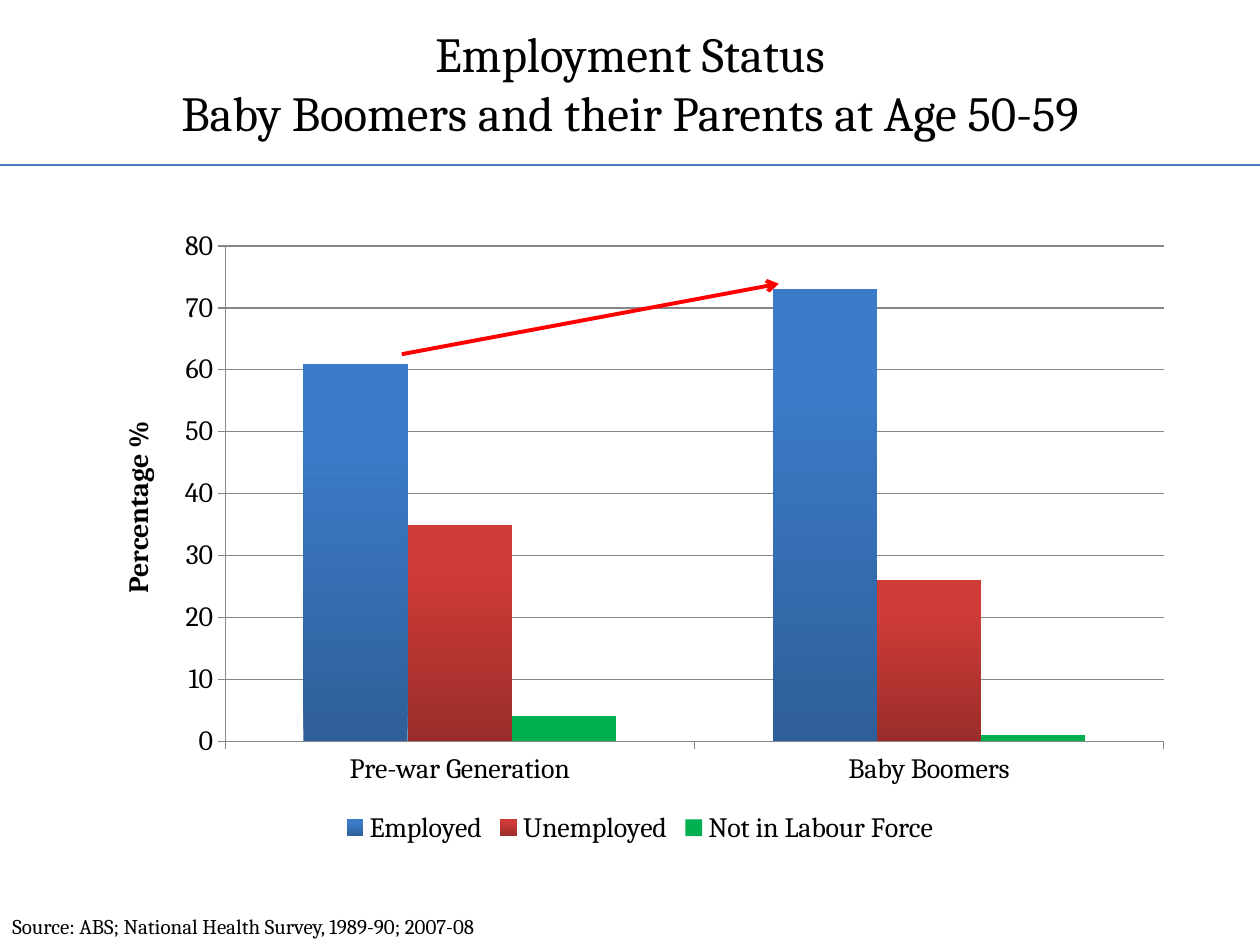
from collections import namedtuple

from lxml import etree
from pptx import Presentation
from pptx import util as u
from pptx.chart.data import CategoryChartData
from pptx.dml.color import RGBColor
from pptx.enum import chart as charts, shapes, text
from pptx.oxml import ns

FONT = "Cambria"
BLACK = RGBColor(0x00, 0x00, 0x00)
GREY = RGBColor(0x86, 0x86, 0x86)
RULE_BLUE = RGBColor(0x4B, 0x7E, 0xBC)
ARROW_RED = RGBColor(0xFF, 0x00, 0x00)
DARK_BLUE = RGBColor(0x2E, 0x5F, 0x98)
LIGHT_BLUE = RGBColor(0x3C, 0x7B, 0xC9)
DARK_RED = RGBColor(0x9A, 0x2D, 0x2A)
LIGHT_RED = RGBColor(0xCF, 0x3B, 0x37)
GREEN = RGBColor(0x00, 0xB0, 0x50)

CATEGORIES = ["Pre-war Generation", "Baby Boomers"]
SERIES = [
    ("Employed", (61, 73), (DARK_BLUE, LIGHT_BLUE)),
    ("Unemployed", (35, 26), (DARK_RED, LIGHT_RED)),
    ("Not in Labour Force", (4, 1), (GREEN,)),
]
PLOT_LAYOUT = {"x": 0.12, "y": 0.05, "w": 0.86, "h": 0.78}

Box = namedtuple("Box", "left top width height")


def format_font(font, size, bold=False, color=BLACK):
    """Apply the slide's typeface with the given size, weight and colour."""
    font.name, font.size, font.bold = FONT, u.Pt(size), bold
    font.color.rgb = color


def write_text(frame, content, size, align=text.PP_ALIGN.LEFT, anchor=text.MSO_ANCHOR.TOP, **font):
    """Write one paragraph into a text frame and format it."""
    frame.word_wrap = True
    frame.vertical_anchor = anchor
    paragraph = frame.paragraphs[0]
    paragraph.text = content
    paragraph.alignment = align
    for run in paragraph.runs:
        format_font(run.font, size, **font)


def add_line(slide, start, end, color, width, arrow=False):
    """Draw a straight line, with an open arrowhead at its end if asked."""
    points = [u.Cm(value) for value in (*start, *end)]
    connector = slide.shapes.add_connector(shapes.MSO_CONNECTOR.STRAIGHT, *points)
    connector.line.color.rgb = color
    connector.line.width = u.Pt(width)
    properties = connector._element.spPr
    etree.SubElement(properties, ns.qn("a:effectLst"))
    if arrow:
        etree.SubElement(connector.line._get_or_add_ln(), ns.qn("a:tailEnd"), type="arrow")


def add_header(slide, box):
    """Place the title with a full-width rule along the bottom of its box."""
    margin = 1.27
    title = slide.shapes.title
    title.left, title.top = u.Cm(box.left + margin), u.Cm(box.top)
    title.width, title.height = u.Cm(box.width - 2 * margin), u.Cm(box.height)
    write_text(
        title.text_frame,
        "Employment Status\vBaby Boomers and their Parents at Age 50-59",
        28,
        align=text.PP_ALIGN.CENTER,
        anchor=text.MSO_ANCHOR.MIDDLE,
    )
    bottom = box.top + box.height
    add_line(slide, (box.left, bottom), (box.left + box.width, bottom), RULE_BLUE, 1)


def fill_series(series, colors):
    """Fill bars with one colour, or with a gradient rising from dark to light."""
    fill = series.format.fill
    if len(colors) == 1:
        fill.solid()
        fill.fore_color.rgb = colors[0]
        return
    fill.gradient()
    fill.gradient_angle = 90
    for stop, color, position in zip(fill.gradient_stops, colors, (0, 0.8)):
        stop.color.rgb = color
        stop.position = position


def fix_plot_area(chart):
    """Pin the inner plot area to fixed fractions of the chart."""
    plot_area = chart._chartSpace.chart.plotArea
    for old_layout in plot_area.findall(ns.qn("c:layout")):
        plot_area.remove(old_layout)
    layout = etree.Element(ns.qn("c:layout"))
    manual = etree.SubElement(layout, ns.qn("c:manualLayout"))
    settings = {"layoutTarget": "inner", "xMode": "edge", "yMode": "edge", **PLOT_LAYOUT}
    for name, value in settings.items():
        etree.SubElement(manual, ns.qn(f"c:{name}"), val=str(value))
    plot_area.insert(0, layout)


def format_axes(chart):
    """Style both axes, the gridlines and the value axis title."""
    for axis in (chart.category_axis, chart.value_axis):
        axis.major_tick_mark = charts.XL_TICK_MARK.OUTSIDE
        axis.format.line.color.rgb = GREY
        format_font(axis.tick_labels.font, 16)
    value_axis = chart.value_axis
    value_axis.minimum_scale, value_axis.maximum_scale, value_axis.major_unit = 0, 80, 10
    value_axis.has_major_gridlines = True
    value_axis.major_gridlines.format.line.color.rgb = GREY
    write_text(value_axis.axis_title.text_frame, "Percentage %", 16,
               align=text.PP_ALIGN.CENTER, bold=True)


def add_employment_chart(slide, box):
    """Place the column chart and the arrow between the employed columns."""
    data = CategoryChartData(number_format="General")
    data.categories = CATEGORIES
    for name, values, _ in SERIES:
        data.add_series(name, values)
    frame = slide.shapes.add_chart(
        charts.XL_CHART_TYPE.COLUMN_CLUSTERED, *(u.Cm(value) for value in box), data
    )
    chart = frame.chart
    format_font(chart.font, 10)
    chart.has_title = False
    chart.has_legend = True
    chart.legend.position = charts.XL_LEGEND_POSITION.BOTTOM
    chart.legend.include_in_layout = False
    format_font(chart.legend.font, 16)
    plot = chart.plots[0]
    plot.gap_width, plot.overlap = 150, 0
    plot.vary_by_categories = False
    for series, (_, _, colors) in zip(plot.series, SERIES):
        fill_series(series, colors)
    format_axes(chart)
    fix_plot_area(chart)
    start = (box.left + 6.2, box.top + 2.82)
    end = (box.left + 13.8, box.top + 1.4)
    add_line(slide, start, end, ARROW_RED, 2.25, arrow=True)


def add_source(slide, box):
    """Place the source note."""
    note = slide.shapes.add_textbox(*(u.Cm(value) for value in box))
    write_text(note.text_frame, "Source: ABS; National Health Survey, 1989-90; 2007-08", 12)


def main():
    """Build and save the presentation."""
    presentation = Presentation()
    presentation.slide_width, presentation.slide_height = u.Cm(25.4), u.Cm(19.05)
    slide = presentation.slides.add_slide(presentation.slide_layouts.get_by_name("Title Only"))
    add_header(slide, Box(0, 0, 25.4, 3.33))
    add_employment_chart(slide, Box(1.9, 4.32, 22, 12.8))
    add_source(slide, Box(0, 18.29, 11.71, 0.76))
    presentation.save("out.pptx")


if __name__ == "__main__":
    main()
